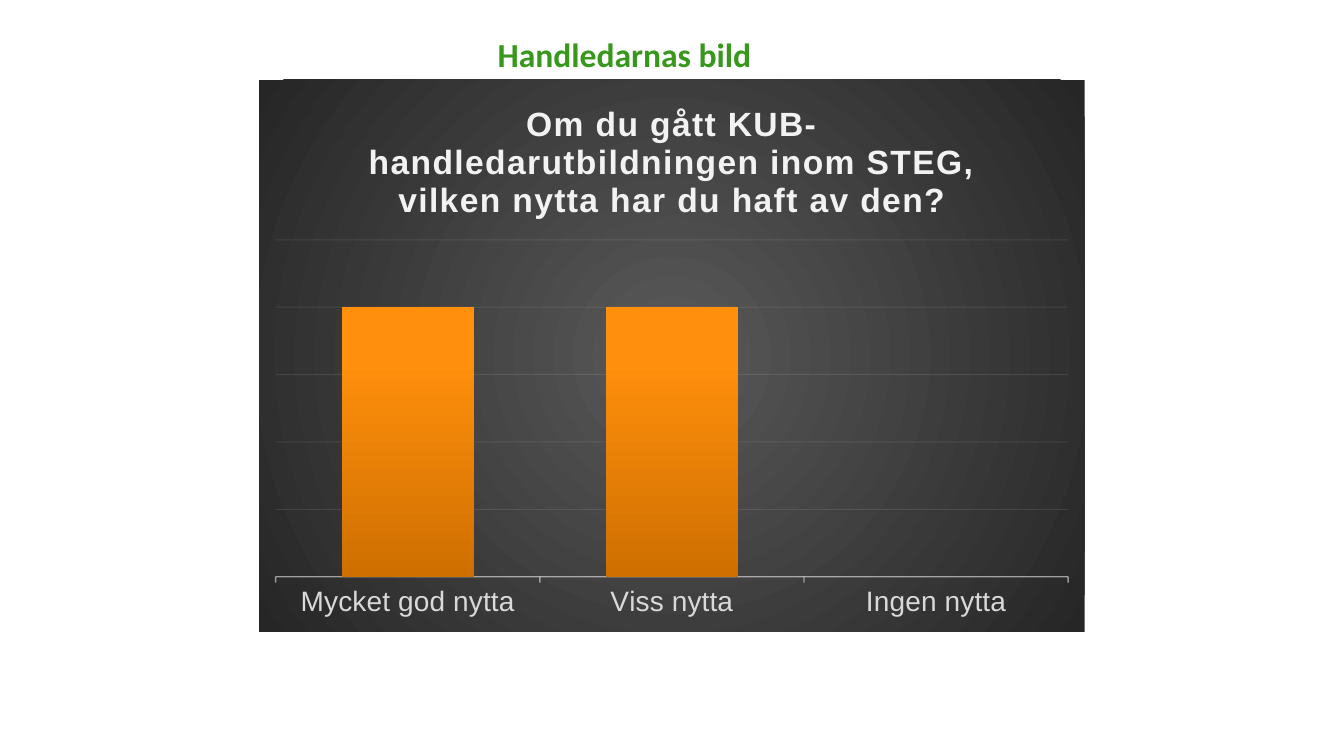
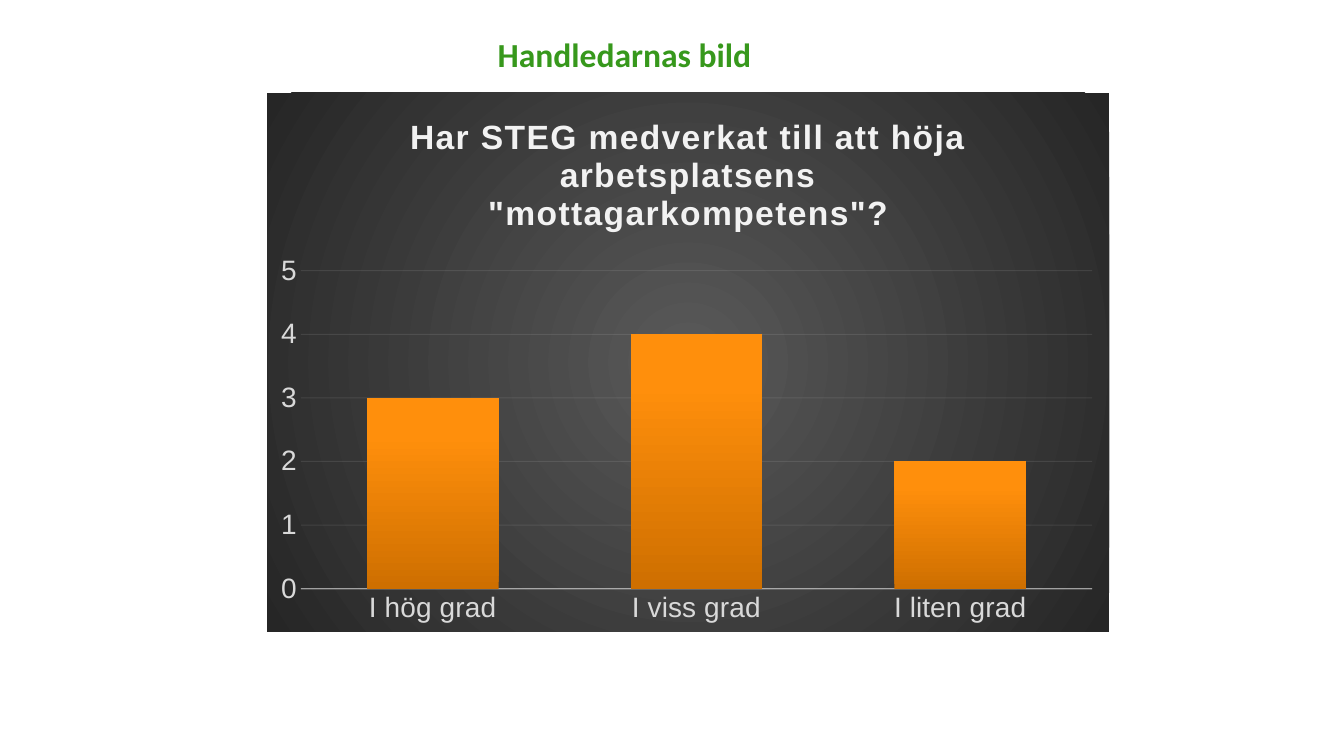
from pptx import Presentation, util as u
from pptx.chart.data import CategoryChartData
from pptx.dml.color import RGBColor
from pptx.enum import chart as ch, text
from pptx.oxml import parse_xml
from pptx.oxml.ns import nsdecls, qn

GREEN = RGBColor(0x37, 0x98, 0x1C)
PALE = RGBColor(0xF2, 0xF2, 0xF2)
GREY = RGBColor(0xD9, 0xD9, 0xD9)
PANEL_STOPS = [(0, RGBColor(0x59, 0x59, 0x59)), (100, RGBColor(0x26, 0x26, 0x26))]
BAR_STOPS = [(0, RGBColor(0xCE, 0x6F, 0x00)), (80, RGBColor(0xFF, 0x8F, 0x0C)),
             (100, RGBColor(0xFF, 0x8F, 0x0E))]
RADIAL = '<a:path path="circle"><a:fillToRect l="50000" t="50000" r="50000" b="50000"/></a:path>'
UPWARD = '<a:lin ang="16200000" scaled="0"/>'

WIDTH, HEIGHT = u.Inches(13.33), u.Inches(7.5)
TITLE_BOX = (15.75, 3.87, 61.43, 6.67)


def place(left, top, width, height):
    """Turn percentages of the slide into lengths."""
    return [round(share * side / 100) for share, side in
            zip((left, top, width, height), (WIDTH, HEIGHT) * 2)]


def set_font(font, name="Arial", size=20, color=GREY, bold=False):
    font.name, font.size, font.bold = name, u.Pt(size), bold
    font.color.rgb = color


def write(tf, words, spacing=0, **style):
    p = tf.paragraphs[0]
    p.alignment = text.PP_ALIGN.CENTER
    r = p.add_run()
    r.text = words
    set_font(r.font, **style)
    if spacing:
        r.font._element.set("spc", str(spacing))


def gradient_shape(stops, direction):
    """Chart shape properties with a gradient fill and no outline."""
    marks = "".join(f'<a:gs pos="{pos * 1000}"><a:srgbClr val="{color}"/></a:gs>'
                    for pos, color in stops)
    return parse_xml(f'<c:spPr {nsdecls("c", "a")}><a:gradFill><a:gsLst>{marks}</a:gsLst>'
                     f'{direction}</a:gradFill><a:ln><a:noFill/></a:ln></c:spPr>')


def set_line(fmt, width, opacity):
    fmt.line.width = u.Pt(width)
    fmt.line.color.rgb = PALE
    color = fmt.element.find(f"{qn('c:spPr')}//{qn('a:srgbClr')}")
    color.append(parse_xml(f'<a:alpha {nsdecls("a")} val="{opacity * 1000}"/>'))


def set_plot_area(chart, x, y, w, h):
    """Fix the inner plot area, in shares of the chart."""
    area = chart.element.find(f".//{qn('c:plotArea')}")
    for old in area.findall(qn("c:layout")):
        area.remove(old)
    sides = "".join(f'<c:{key} val="{val}"/>' for key, val in zip("xywh", (x, y, w, h)))
    area.insert(0, parse_xml(
        f'<c:layout {nsdecls("c")}><c:manualLayout><c:layoutTarget val="inner"/>'
        f'<c:xMode val="edge"/><c:yMode val="edge"/>{sides}</c:manualLayout></c:layout>'))


def add_title(s, words):
    sp = s.shapes.title
    sp.left, sp.top, sp.width, sp.height = place(*TITLE_BOX)
    tf = sp.text_frame
    tf.word_wrap = True
    tf.auto_size = text.MSO_AUTO_SIZE.SHAPE_TO_FIT_TEXT
    tf.vertical_anchor = text.MSO_ANCHOR.TOP
    write(tf, words, name="Calibri", size=24, color=GREEN, bold=True)


def add_bars(s, question, answers, box, plot_area, top, step, show_values, ticks):
    data = CategoryChartData()
    data.categories = list(answers)
    data.add_series("Series 1", list(answers.values()))
    chart = s.shapes.add_chart(ch.XL_CHART_TYPE.COLUMN_CLUSTERED, *place(*box), data).chart
    set_font(chart.font)
    chart.has_legend = False
    chart.has_title = True
    write(chart.chart_title.text_frame, question, spacing=100, size=24, color=PALE, bold=True)
    chart.element.find(qn("c:chart")).addnext(gradient_shape(PANEL_STOPS, RADIAL))

    plot = chart.plots[0]
    plot.gap_width, plot.overlap, plot.vary_by_categories = 100, -24, False
    bars = plot.series[0]
    bars.invert_if_negative = False
    bars.format.fill.background()
    shape = chart.element.find(f".//{qn('c:ser')}/{qn('c:spPr')}")
    shape.getparent().replace(shape, gradient_shape(BAR_STOPS, UPWARD))

    cats, vals = chart.category_axis, chart.value_axis
    for axis in (cats, vals):
        set_font(axis.tick_labels.font)
        axis.major_tick_mark = axis.minor_tick_mark = ch.XL_TICK_MARK.NONE
    cats.major_tick_mark = ticks
    set_line(cats.format, 1, 54)
    vals.minimum_scale, vals.maximum_scale, vals.major_unit = 0, top, step
    vals.visible = show_values
    vals.format.line.fill.background()
    vals.has_major_gridlines = True
    set_line(vals.major_gridlines.format, 0.75, 10)
    set_plot_area(chart, *plot_area)


def main():
    prs = Presentation()
    prs.slide_width, prs.slide_height = WIDTH, HEIGHT
    charts = [
        dict(question="Om du gått KUB-handledarutbildningen inom STEG, "
                      "vilken nytta har du haft av den?",
             answers={"Mycket god nytta": 100, "Viss nytta": 100, "Ingen nytta": 0},
             box=(19.28, 10.53, 61.43, 73.07), plot_area=(0.02, 0.29, 0.96, 0.61),
             top=125, step=25, show_values=False, ticks=ch.XL_TICK_MARK.OUTSIDE),
        dict(question='Har STEG medverkat till att höja arbetsplatsens "mottagarkompetens"?',
             answers={"I hög grad": 3, "I viss grad": 4, "I liten grad": 2},
             box=(19.88, 12.27, 62.64, 71.33), plot_area=(0.04, 0.33, 0.94, 0.59),
             top=5, step=1, show_values=True, ticks=ch.XL_TICK_MARK.NONE),
    ]
    for content in charts:
        s = prs.slides.add_slide(prs.slide_layouts[5])
        add_title(s, "Handledarnas bild")
        add_bars(s, **content)
    prs.save("out.pptx")


if __name__ == "__main__":
    main()
